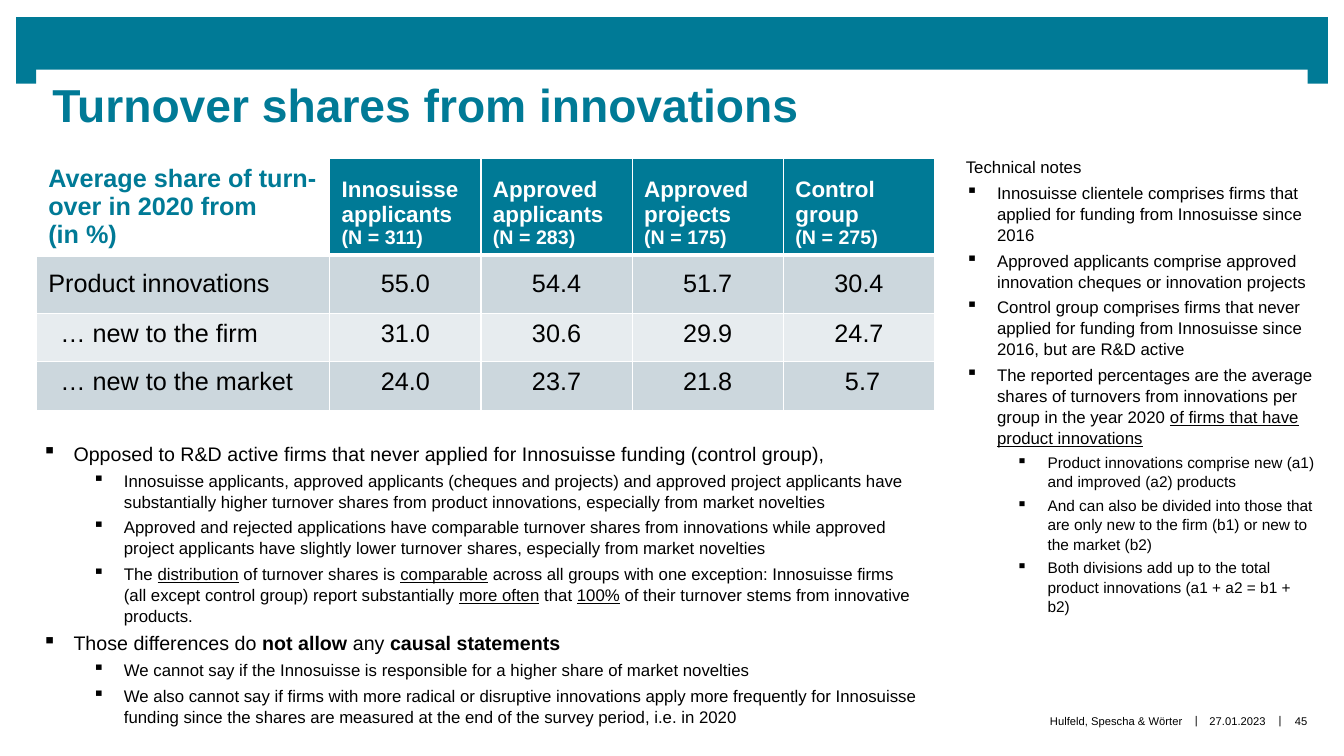
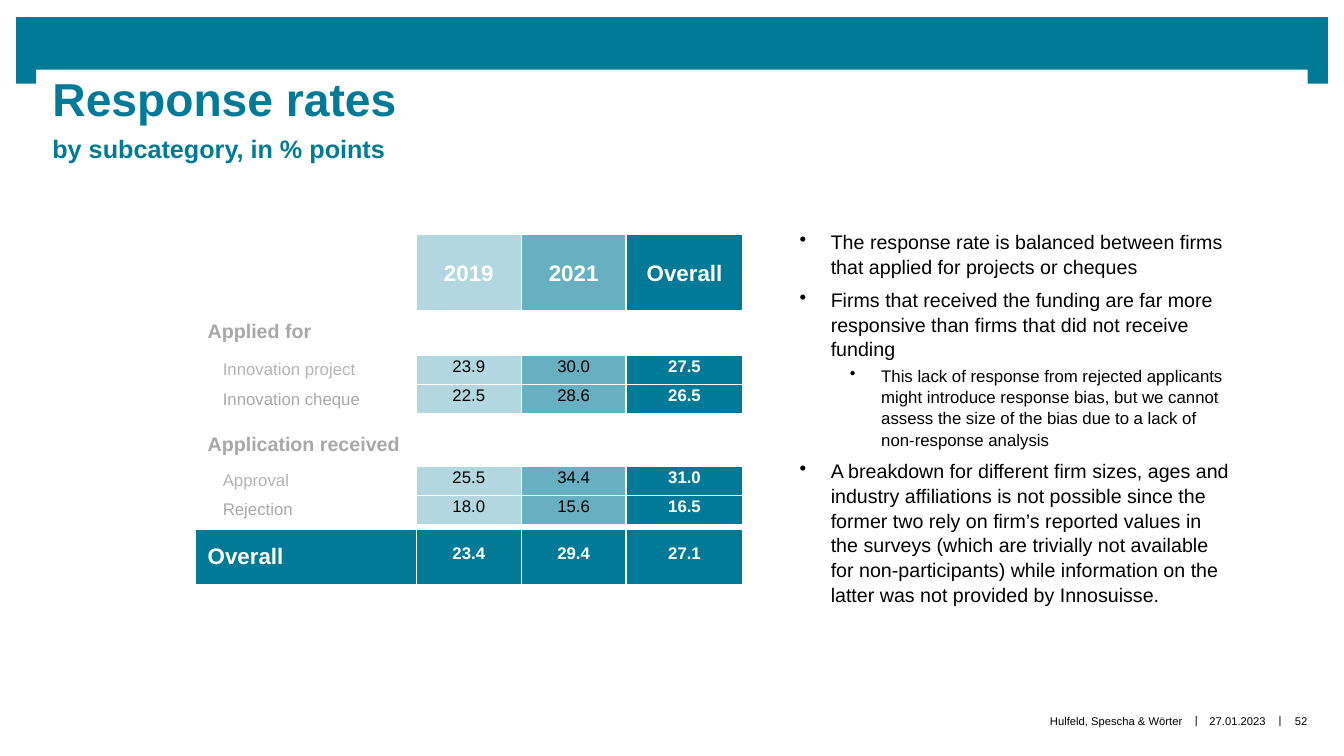
from dataclasses import dataclass, replace
from typing import NamedTuple, Optional

from lxml.etree import SubElement
from pptx import Presentation
from pptx.dml.color import RGBColor
from pptx.enum.shapes import MSO_SHAPE as Shape
from pptx.enum.text import MSO_ANCHOR as Anchor, MSO_AUTO_SIZE as AutoSize, PP_ALIGN as Align
from pptx.oxml.ns import qn
from pptx.util import Inches, Pt

COLORS = {
    "teal": "007A96", "teal_mid": "66B0C2", "teal_light": "B3D7E0",
    "white": "FFFFFF", "black": "000000", "band_dark": "CCD7DD",
    "band_light": "E7ECEF", "gray": "A8A8A8", "gray_light": "B4B4B4",
}
FONT = "Arial"
TITLE_ONLY = 5


class Area(NamedTuple):
    left: float
    top: float
    width: float
    height: float

    def lengths(self) -> list:
        return [Inches(value) for value in self]


class Span(NamedTuple):
    text: str
    bold: bool = False
    underline: bool = False


class FooterPart(NamedTuple):
    text: str
    area: Area
    align: Align = Align.CENTER


@dataclass(frozen=True)
class Item:
    spans: tuple
    size: float = 12
    level: int = 0
    bullet: Optional[str] = "▪"
    before: float = 3
    after: float = 0


@dataclass(frozen=True)
class CellLook:
    size: float = 12
    color: str = "black"
    bold: bool = False
    align: Align = Align.LEFT
    anchor: Anchor = Anchor.TOP
    fill: str = "white"
    margins: tuple = (0.12, 0.06, 0.12, 0.06)
    bottom_line: float = 1


def rgb(name: str) -> RGBColor:
    return RGBColor.from_string(COLORS[name])


def add_text(para, text: str, *, size: float, color: str = "black",
             bold: bool = False, underline: bool = False) -> None:
    run = para.add_run()
    run.text = text
    font = run.font
    font.name, font.size, font.bold = FONT, Pt(size), bold
    font.color.rgb = rgb(color)
    if underline:
        font.underline = True


def set_frame(frame, margins: tuple, anchor: Anchor = Anchor.TOP) -> None:
    frame.word_wrap = True
    frame.auto_size = AutoSize.NONE
    frame.vertical_anchor = anchor
    (frame.margin_left, frame.margin_top,
     frame.margin_right, frame.margin_bottom) = map(Inches, margins)


def next_para(frame, index: int):
    return frame.add_paragraph() if index else frame.paragraphs[0]


def add_bullet(para, char: str, level: int) -> None:
    props = para._p.get_or_add_pPr()
    props.set("marL", str(Inches(0.31 + 0.5 * level)))
    props.set("indent", str(Inches(-0.31)))
    SubElement(props, qn("a:buChar")).set("char", char)


def add_list(page, area: Area, items: list, top_margin: float) -> None:
    frame = page.shapes.add_textbox(*area.lengths()).text_frame
    set_frame(frame, (0.16, top_margin, 0.16, 0.1))
    for index, item in enumerate(items):
        para = next_para(frame, index)
        para.level = item.level
        para.line_spacing = 1.05
        para.space_before = Pt(item.before if index else 0)
        para.space_after = Pt(item.after)
        if item.bullet:
            add_bullet(para, item.bullet, item.level)
        for span in item.spans:
            add_text(para, span.text, size=item.size, bold=span.bold, underline=span.underline)


def add_page(deck, title_area: Area, lines: list, number: int):
    page = deck.slides.add_slide(deck.slide_layouts[TITLE_ONLY])
    for area in (Area(0.16, 0.17, 13.01, 0.52), Area(0.16, 0.65, 0.2, 0.18),
                 Area(12.97, 0.65, 0.2, 0.18)):
        band = page.shapes.add_shape(Shape.RECTANGLE, *area.lengths())
        band.shadow.inherit = False
        band.fill.solid()
        band.fill.fore_color.rgb = rgb("teal")
        band.line.fill.background()

    title = page.shapes.title
    title.left, title.top, title.width, title.height = title_area.lengths()
    set_frame(title.text_frame, (0.16, 0.31, 0.16, 0), Anchor.BOTTOM)
    for index, (text, size) in enumerate(lines):
        para = next_para(title.text_frame, index)
        para.alignment = Align.LEFT
        para.space_before = Pt(5 if index else 0)
        add_text(para, text, size=size, color="teal", bold=True)

    for part in (
        FooterPart("Hulfeld, Spescha & Wörter", Area(0.36, 6.9, 11.37, 0.5), Align.RIGHT),
        FooterPart("|", Area(11.79, 6.89, 0.15, 0.5)),
        FooterPart("27.01.2023", Area(11.94, 6.9, 0.67, 0.5)),
        FooterPart("|", Area(12.62, 6.89, 0.15, 0.5)),
        FooterPart(str(number), Area(12.71, 6.9, 0.39, 0.5)),
    ):
        frame = page.shapes.add_textbox(*part.area.lengths()).text_frame
        set_frame(frame, (0, 0, 0, 0), Anchor.MIDDLE)
        para = frame.paragraphs[0]
        para.alignment = part.align
        add_text(para, part.text, size=8)
    return page


def add_grid(page, left: float, top: float, widths: list, heights: list):
    area = Area(left, top, sum(widths), sum(heights))
    grid = page.shapes.add_table(len(heights), len(widths), *area.lengths()).table
    grid.first_row = grid.horz_banding = False
    for column, width in zip(grid.columns, widths):
        column.width = Inches(width)
    for row, height in zip(grid.rows, heights):
        row.height = Inches(height)
    return grid


def write_cell(cell, look: CellLook, *lines: tuple) -> None:
    cell.fill.solid()
    cell.fill.fore_color.rgb = rgb(look.fill)
    cell.vertical_anchor = look.anchor
    (cell.margin_left, cell.margin_top,
     cell.margin_right, cell.margin_bottom) = map(Inches, look.margins)
    props = cell._tc.get_or_add_tcPr()
    for index, side in enumerate(("lnL", "lnR", "lnT", "lnB")):
        line = SubElement(props, qn(f"a:{side}"))
        line.set("w", str(Pt(look.bottom_line if side == "lnB" else 1)))
        solid = SubElement(line, qn("a:solidFill"))
        SubElement(solid, qn("a:srgbClr")).set("val", COLORS["white"])
        props.insert(index, line)
    for index, runs in enumerate(lines):
        para = next_para(cell.text_frame, index)
        para.alignment = look.align
        for text, size in runs:
            add_text(para, text, size=size, color=look.color, bold=look.bold)


def write_blank(cell) -> None:
    write_cell(cell, CellLook(margins=(0, 0, 0, 0)))
    SubElement(cell.text_frame.paragraphs[0]._p, qn("a:endParaRPr")).set("sz", "100")


def build_turnover(deck) -> None:
    page = add_page(deck, Area(0.36, 0.72, 12.61, 0.59),
                    [("Turnover shares from innovations", 33)], 45)
    grid = add_grid(page, 0.36, 1.57, [2.91] + [1.5] * 4, [0.95, 0.58, 0.48, 0.48])
    corner = CellLook(color="teal", bold=True, anchor=Anchor.BOTTOM, bottom_line=3)
    write_cell(grid.cell(0, 0), corner,
               [("Average share of turn- over in 2020 from", 18)], [("(in %)", 18)])
    header = replace(corner, color="white", fill="teal")
    groups = [("Innosuisse applicants", 311), ("Approved applicants", 283),
              ("Approved projects", 175), ("Control group", 275)]
    for column, (group, count) in enumerate(groups, 1):
        write_cell(grid.cell(0, column), header, [(group, 16)], [(f"(N = {count})", 14)])

    rows = [
        ("Product innovations", ("55.0", "54.4", "51.7", "30.4")),
        ("… new to the firm", ("31.0", "30.6", "29.9", "24.7")),
        ("… new to the market", ("24.0", "23.7", "21.8", " 5.7")),
    ]
    for row, (label, values) in enumerate(rows, 1):
        look = CellLook(anchor=Anchor.MIDDLE if row == 1 else Anchor.TOP,
                        fill="band_dark" if row % 2 else "band_light")
        indent = 0.12 if row == 1 else 0.24
        write_cell(grid.cell(row, 0), replace(look, margins=(indent, 0.06, 0.12, 0.06)),
                   [(label, 18)])
        for column, value in enumerate(values, 1):
            write_cell(grid.cell(row, column), replace(look, align=Align.CENTER), [(value, 18)])

    add_list(page, Area(9.42, 1.39, 3.8, 4.47), [
        Item((Span("Technical notes"),), bullet=None),
        Item((Span("Innosuisse clientele comprises firms that applied for funding from Innosuisse since 2016"),)),
        Item((Span("Approved applicants comprise approved innovation cheques or innovation projects"),)),
        Item((Span("Control group comprises firms that never applied for funding from Innosuisse since 2016, but are R&D active"),)),
        Item((Span("The reported percentages are the average shares of turnovers from innovations per group in the year 2020 "),
              Span("of firms that have product innovations", underline=True))),
        Item((Span("Product innovations comprise new (a1) and improved (a2) products"),), 11, 1),
        Item((Span("And can also be divided into those that are only new to the firm (b1) or new to the market (b2)"),), 11, 1),
        Item((Span("Both divisions add up to the total product innovations (a1 + a2 = b1 + b2)"),), 11, 1),
    ], 0.16)
    add_list(page, Area(0.26, 4.21, 9, 3), [
        Item((Span("Opposed to R&D active firms that never applied for Innosuisse funding (control group),"),), 14),
        Item((Span("Innosuisse applicants, approved applicants (cheques and projects) and approved project applicants have substantially higher turnover shares from product innovations, especially from market novelties"),), level=1),
        Item((Span("Approved and rejected applications have comparable turnover shares from innovations while approved project applicants have slightly lower turnover shares, especially from market novelties"),), level=1),
        Item((Span("The "), Span("distribution", underline=True), Span(" of turnover shares is "),
              Span("comparable", underline=True),
              Span(" across all groups with one exception: Innosuisse firms (all except control group) report substantially "),
              Span("more often", underline=True), Span(" that "), Span("100%", underline=True),
              Span(" of their turnover stems from innovative products.")), level=1),
        Item((Span("Those differences do "), Span("not allow ", bold=True), Span("any "),
              Span("causal statements", bold=True)), 14),
        Item((Span("We cannot say if the Innosuisse is responsible for a higher share of market novelties"),), level=1),
        Item((Span("We also cannot say if firms with more radical or disruptive innovations apply more frequently for Innosuisse funding since the shares are measured at the end of the survey period, i.e. in 2020"),), level=1),
    ], 0.16)


def build_response(deck) -> None:
    page = add_page(deck, Area(0.36, 0.68, 12.61, 0.94),
                    [("Response rates", 33), ("by subcategory, in % points", 18)], 52)
    group_heights = [0.43, 0.29, 0.29]
    grid = add_grid(page, 1.94, 2.33, [2.19, 1.04, 1.04, 1.16],
                    [0.4, 0.29, *group_heights, 0.09, *group_heights, 0.05, 0.54])
    fills = ("teal_light", "teal_mid", "teal")
    header = CellLook(color="white", bold=True, align=Align.CENTER, anchor=Anchor.MIDDLE)
    for column, (label, fill) in enumerate(zip(("2019", "2021", "Overall"), fills), 1):
        grid.cell(0, column).merge(grid.cell(1, column))
        write_cell(grid.cell(0, column), replace(header, fill=fill, bottom_line=3), [(label, 16)])

    section = CellLook(color="gray", bold=True, anchor=Anchor.MIDDLE)
    for row, label, top_margin in ((2, "Applied for", 0.05), (6, "Application received", 0.09)):
        write_cell(grid.cell(row, 0), replace(section, margins=(0.12, top_margin, 0.12, 0.09)),
                   [(label, 14)])
    for row in (0, 1, 5, 9):
        write_blank(grid.cell(row, 0))
    for row in (2, 5, 6, 9):
        for column in (1, 2, 3):
            write_blank(grid.cell(row, column))

    rates = [
        (3, "Innovation project", "gray_light", ("23.9", "30.0", "27.5")),
        (4, "Innovation cheque", "gray", ("22.5", "28.6", "26.5")),
        (7, "Approval", "gray_light", ("25.5", "34.4", "31.0")),
        (8, "Rejection", "gray", ("18.0", "15.6", "16.5")),
    ]
    for row, label, color, values in rates:
        write_cell(grid.cell(row, 0), CellLook(color=color, anchor=Anchor.MIDDLE,
                                               margins=(0.27, 0.02, 0.12, 0.02)), [(label, 12)])
        for column, (value, fill) in enumerate(zip(values, fills), 1):
            strong = fill == "teal"
            look = CellLook(color="white" if strong else "black", bold=strong, fill=fill,
                            align=Align.CENTER, margins=(0.12, 0.02, 0.12, 0.02))
            write_cell(grid.cell(row, column), look, [(value, 12)])

    total = CellLook(color="white", bold=True, fill="teal", margins=(0.12, 0.14, 0.12, 0.14))
    write_cell(grid.cell(10, 0), replace(total, anchor=Anchor.MIDDLE), [("Overall", 16)])
    for column, value in enumerate(("23.4", "29.4", "27.1"), 1):
        write_cell(grid.cell(10, column), replace(total, align=Align.CENTER), [(value, 12)])

    add_list(page, Area(7.77, 2.07, 4.62, 3.91), [
        Item((Span("The response rate is balanced between firms that applied for projects or cheques"),), 14, 0, "•", 0, 6),
        Item((Span("Firms that received the funding are far more responsive than firms that did not receive funding"),), 14, 0, "•", 0, 3),
        Item((Span("This lack of response from rejected applicants might introduce response bias, but we cannot assess the size of the bias due to a lack of non-response analysis"),), 12, 1, "•", 0, 6),
        Item((Span("A breakdown for different firm sizes, ages and industry affiliations is not possible since the former two rely on firm’s reported values in the surveys (which are trivially not available for non-participants) while information on the latter was not provided by Innosuisse."),), 14, 0, "•", 0),
    ], 0.2)


def main() -> None:
    deck = Presentation()
    deck.slide_width, deck.slide_height = Inches(13.33), Inches(7.5)
    build_turnover(deck)
    build_response(deck)
    deck.save("out.pptx")


if __name__ == "__main__":
    main()
